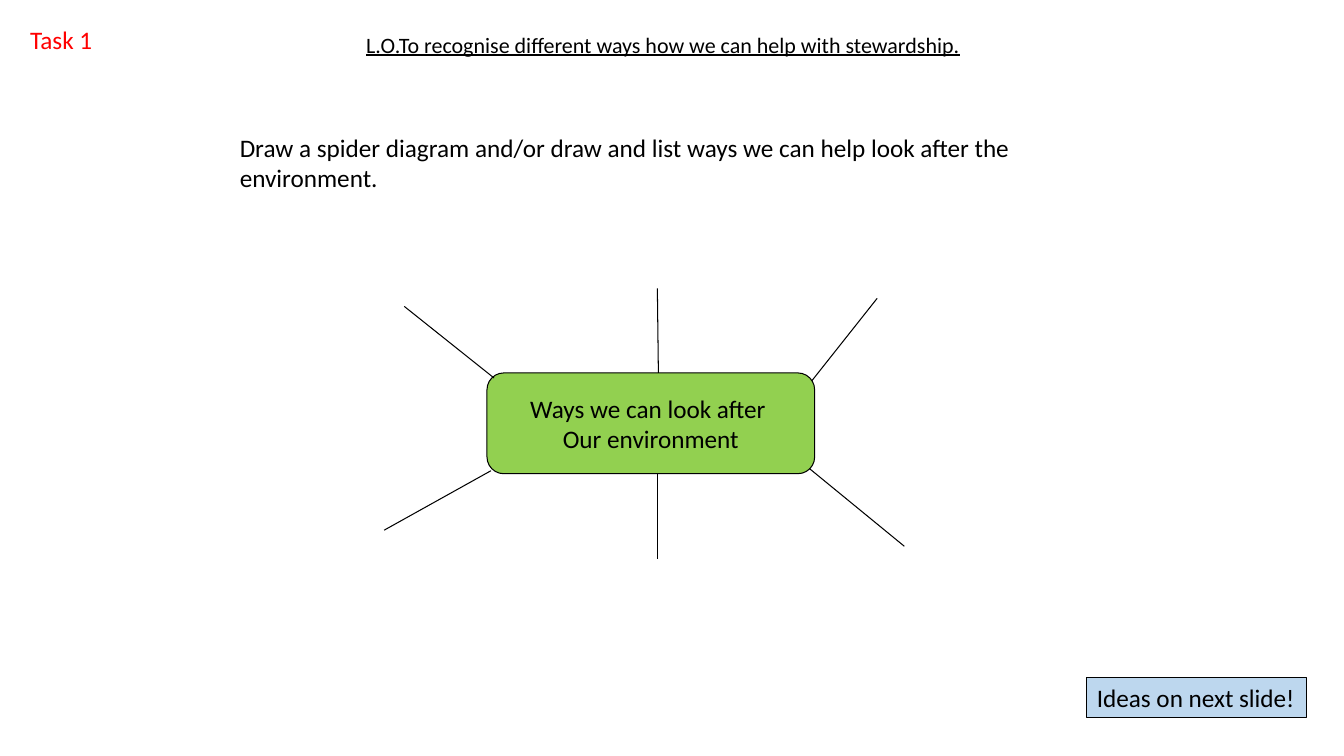
from lxml import etree
from pptx import Presentation
from pptx.dml.color import RGBColor
from pptx.enum import shapes, text
from pptx.oxml.ns import qn
from pptx.util import Inches, Pt

COLOURS = {"ink": "000000", "task": "FF0000", "hub": "92D050", "note": "BDD7EE"}


def colour(name):
    return RGBColor.from_string(COLOURS[name])


def write(shape, lines, size=18, ink="ink", align=text.PP_ALIGN.LEFT, underline=False,
          anchor=text.MSO_ANCHOR.TOP, wrap=True, spacing=None):
    frame = shape.text_frame
    frame.auto_size = text.MSO_AUTO_SIZE.NONE
    frame.word_wrap = wrap
    frame.vertical_anchor = anchor
    frame.text = "\n".join(lines)
    for paragraph in frame.paragraphs:
        paragraph.alignment = align
        paragraph.line_spacing = spacing
        for run in paragraph.runs:
            run.font.name = "Calibri"
            run.font.size = Pt(size)
            run.font.underline = underline
            run.font.color.rgb = colour(ink)


def add_objective(slide, left, top, width, height):
    title = slide.shapes.title
    title.left, title.top = Inches(left), Inches(top)
    title.width, title.height = Inches(width), Inches(height)
    write(title, ["L.O.To recognise different ways how we can help with stewardship."],
          size=15.7, align=text.PP_ALIGN.CENTER, underline=True, spacing=0.8)


def add_text(slide, left, top, width, height, words, **style):
    box = slide.shapes.add_textbox(*map(Inches, (left, top, width, height)))
    write(box, [words], **style)


def add_panel(slide, kind, left, top, width, height, fill, lines, **style):
    """Add a filled, thinly outlined shape with text."""
    panel = slide.shapes.add_shape(kind, *map(Inches, (left, top, width, height)))
    panel.shadow.inherit = False
    panel.fill.solid()
    panel.fill.fore_color.rgb = colour(fill)
    panel.line.color.rgb = colour("ink")
    panel.line.width = Pt(0.75)
    write(panel, lines, **style)


def add_leg(slide, start, end):
    leg = slide.shapes.add_connector(
        shapes.MSO_CONNECTOR.STRAIGHT, *map(Inches, (*start, *end)))
    leg.line.color.rgb = colour("ink")
    leg.line.width = Pt(0.75)
    etree.SubElement(leg._element.spPr, qn("a:effectLst"))


def add_spider_diagram(slide, left, top, width, height):
    """Draw the hub in the given box with six legs reaching out of it."""
    right, bottom = left + width, top + height
    middle = left + 1.69
    add_panel(slide, shapes.MSO_SHAPE.ROUNDED_RECTANGLE, left, top, width, height, "hub",
              ["Ways we can look after ", "Our environment"],
              align=text.PP_ALIGN.CENTER, anchor=text.MSO_ANCHOR.MIDDLE, wrap=False)
    legs = [
        ((left - 0.82, top - 0.66), (left + 0.07, top + 0.05)),
        ((left - 1.02, bottom + 0.56), (left + 0.04, bottom - 0.03)),
        ((right + 0.62, top - 0.74), (right - 0.03, top + 0.08)),
        ((right + 0.89, bottom + 0.72), (right - 0.05, bottom - 0.05)),
        ((middle, top - 0.84), (middle + 0.01, top)),
        ((middle, bottom), (middle, bottom + 0.85)),
    ]
    for start, end in legs:
        add_leg(slide, start, end)


def main():
    presentation = Presentation()
    presentation.slide_width, presentation.slide_height = Inches(13.33), Inches(7.5)
    slide = presentation.slides.add_slide(presentation.slide_layouts.get_by_name("Title Only"))
    add_objective(slide, 3.2, 0.31, 6.75, 0.4)
    add_spider_diagram(slide, 4.83, 3.7, 3.25, 1)
    add_text(slide, 2.28, 1.26, 9, 0.71, "Draw a spider diagram and/or draw and list ways "
             "we can help look after the environment.")
    add_panel(slide, shapes.MSO_SHAPE.RECTANGLE, 10.78, 6.72, 2.18, 0.4, "note",
              ["Ideas on next slide!"])
    add_text(slide, 0.2, 0.19, 2.93, 0.4, "Task 1", ink="task")
    presentation.save("out.pptx")


if __name__ == "__main__":
    main()
